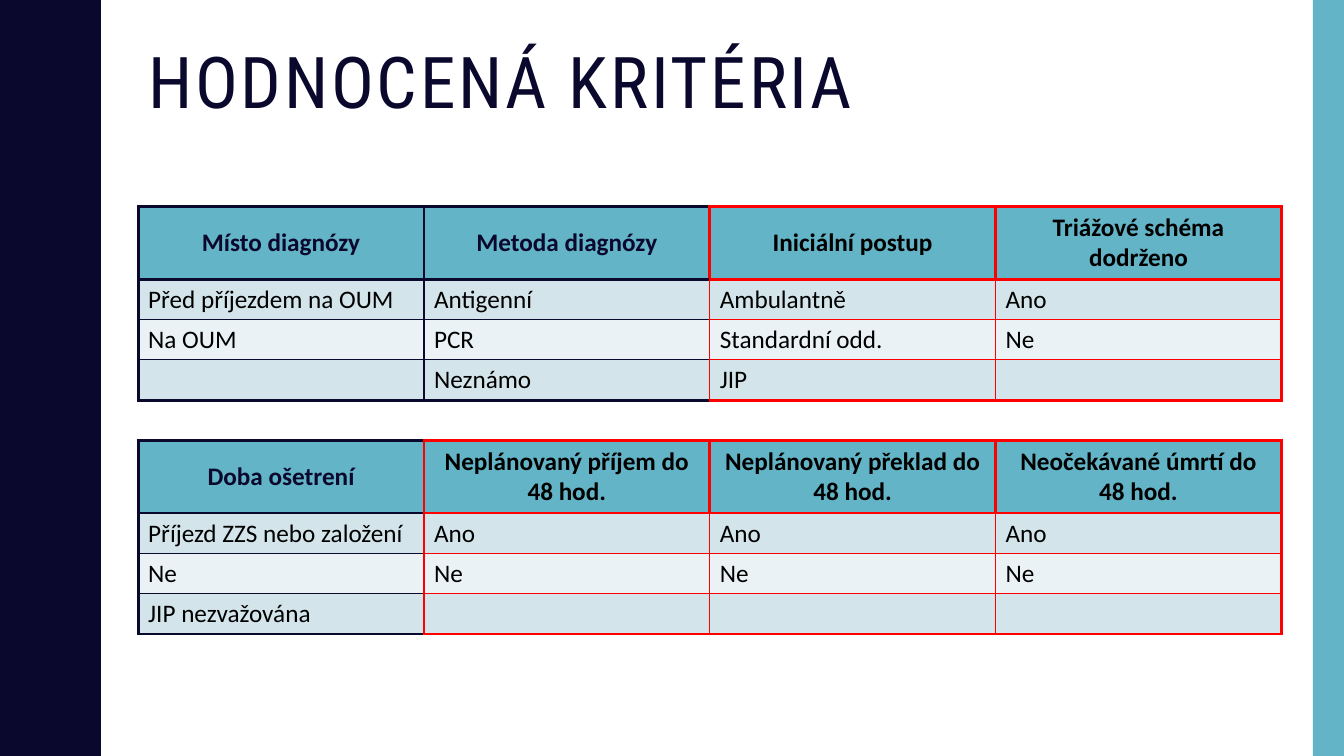
from dataclasses import dataclass

from lxml.etree import SubElement
from pptx import Presentation
from pptx.dml.color import RGBColor
from pptx.enum.shapes import MSO_SHAPE as Preset
from pptx.enum.text import MSO_ANCHOR as Anchor, PP_ALIGN as Align
from pptx.oxml.ns import qn
from pptx.util import Inches, Pt


@dataclass(frozen=True)
class Theme:
    navy: str = "0B082E"
    teal: str = "62B4C6"
    red: str = "FF0000"
    black: str = "000000"
    bands: tuple = ("D3E5EA", "EAF2F5")
    title_font: str = "Roboto Condensed"
    body_font: str = "Calibri"
    title_size: int = 51
    body_size: int = 18
    thick: float = 2.25
    thin: float = 1


THEME = Theme()
TITLE = "HODNOCENÁ KRITÉRIA"
TABLES = [
    {"top": 2.05, "navy_columns": 2, "rows": [
        ("Místo diagnózy", "Metoda diagnózy", "Iniciální postup", "Triážové schéma dodrženo"),
        ("Před příjezdem na OUM", "Antigenní", "Ambulantně", "Ano"),
        ("Na OUM", "PCR", "Standardní odd.", "Ne"),
        ("", "Neznámo", "JIP", ""),
    ]},
    {"top": 4.37, "navy_columns": 1, "rows": [
        ("Doba ošetrení", "Neplánovaný příjem do 48 hod.",
         "Neplánovaný překlad do 48 hod.", "Neočekávané úmrtí do 48 hod."),
        ("Příjezd ZZS nebo založení", "Ano", "Ano", "Ano"),
        ("Ne", "Ne", "Ne", "Ne"),
        ("JIP nezvažována", "", "", ""),
    ]},
]
SLIDE_WIDTH, SLIDE_HEIGHT = 13.33, 7.5
LEFT, TABLE_WIDTH = 1.37, 11.34
HEADER_HEIGHT, ROW_HEIGHT = 0.72, 0.4
STRIPE_WIDTH = 0.31
WAVE_PERIOD, WAVE_COUNT = 1.5, 5
HALF_WAVE = [
    (0.78, 0), (0.78, 0.07), (0.79, 0.14), (0.8, 0.2), (0.81, 0.25),
    (0.83, 0.29), (0.85, 0.33), (0.87, 0.38), (0.89, 0.42), (0.91, 0.46),
    (0.93, 0.5), (0.95, 0.55), (0.96, 0.61), (0.97, 0.68), (0.97, 0.75),
]


def paint(shape, color):
    shape.shadow.inherit = False
    shape.fill.solid()
    shape.fill.fore_color.rgb = RGBColor.from_string(color)
    shape.line.fill.background()


def style_runs(paragraph, font, size, color, bold=False):
    for run in paragraph.runs:
        run.font.name = font
        run.font.size = Pt(size)
        run.font.bold = bold
        run.font.color.rgb = RGBColor.from_string(color)


def add_wave(slide):
    mirrored = [(x, WAVE_PERIOD - y) for x, y in HALF_WAVE[-2:0:-1]]
    edge = [(x, y + WAVE_PERIOD * wave)
            for wave in range(WAVE_COUNT) for x, y in HALF_WAVE + mirrored]
    outline = edge + [(HALF_WAVE[0][0], SLIDE_HEIGHT), (0, SLIDE_HEIGHT)]
    builder = slide.shapes.build_freeform(0, 0, scale=Inches(1))
    builder.add_line_segments(outline, close=True)
    paint(builder.convert_to_shape(), THEME.navy)


def add_stripe(slide):
    stripe = slide.shapes.add_shape(
        Preset.RECTANGLE, Inches(SLIDE_WIDTH - STRIPE_WIDTH), 0,
        Inches(STRIPE_WIDTH), Inches(SLIDE_HEIGHT))
    paint(stripe, THEME.teal)


def add_title(slide):
    box = slide.shapes.add_textbox(Inches(LEFT), Inches(0.42), Inches(11.13), Inches(1.63))
    frame = box.text_frame
    frame.word_wrap = True
    frame.text = TITLE
    paragraph = frame.paragraphs[0]
    paragraph.line_spacing = 0.9
    style_runs(paragraph, THEME.title_font, THEME.title_size, THEME.navy)
    paragraph.runs[0].font._element.set("spc", "200")


def set_borders(cell, borders):
    properties = cell._tc.get_or_add_tcPr()
    for position, (side, (color, width)) in enumerate(borders.items()):
        line = SubElement(properties, qn(f"a:ln{side}"), w=str(int(Pt(width))))
        fill = SubElement(line, qn("a:solidFill"))
        SubElement(fill, qn("a:srgbClr"), val=color)
        properties.insert(position, line)


def cell_borders(row, column, last_row, last_column, navy_columns):
    def edge(is_red, is_thick):
        return (THEME.red if is_red else THEME.navy, THEME.thick if is_thick else THEME.thin)

    header = row == 0
    red = column >= navy_columns
    return {
        "L": edge(red, header or column == 0),
        "R": edge(column + 1 >= navy_columns, header or column == last_column),
        "T": edge(red, row <= 1),
        "B": edge(red, header or row == last_row),
    }


def add_criteria_table(slide, top, navy_columns, rows):
    row_count, column_count = len(rows), len(rows[0])
    height = HEADER_HEIGHT + ROW_HEIGHT * (row_count - 1)
    table = slide.shapes.add_table(
        row_count, column_count, Inches(LEFT), Inches(top),
        Inches(TABLE_WIDTH), Inches(height)).table
    for column in table.columns:
        column.width = Inches(TABLE_WIDTH / column_count)
    for row, texts in enumerate(rows):
        header = row == 0
        table.rows[row].height = Inches(HEADER_HEIGHT if header else ROW_HEIGHT)
        for column, text in enumerate(texts):
            cell = table.cell(row, column)
            cell.text_frame.text = text
            cell.vertical_anchor = Anchor.MIDDLE if header else Anchor.TOP
            cell.fill.solid()
            background = THEME.teal if header else THEME.bands[(row - 1) % 2]
            cell.fill.fore_color.rgb = RGBColor.from_string(background)
            paragraph = cell.text_frame.paragraphs[0]
            paragraph.alignment = Align.CENTER if header else Align.LEFT
            color = THEME.navy if header and column < navy_columns else THEME.black
            style_runs(paragraph, THEME.body_font, THEME.body_size, color, header)
            set_borders(cell, cell_borders(
                row, column, row_count - 1, column_count - 1, navy_columns))


def main():
    presentation = Presentation()
    presentation.slide_width = Inches(SLIDE_WIDTH)
    presentation.slide_height = Inches(SLIDE_HEIGHT)
    slide = presentation.slides.add_slide(presentation.slide_layouts[6])
    add_wave(slide)
    add_stripe(slide)
    add_title(slide)
    for criteria in TABLES:
        add_criteria_table(slide, **criteria)
    presentation.save("out.pptx")


if __name__ == "__main__":
    main()
